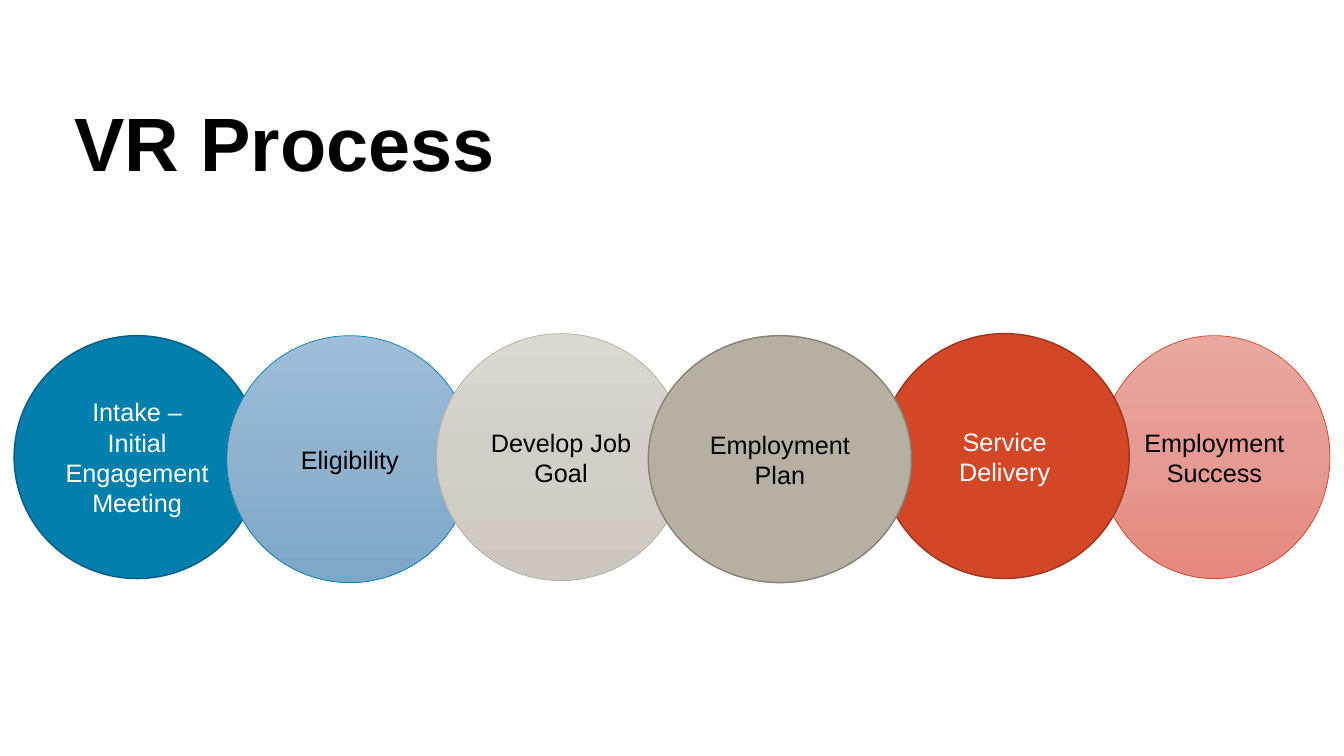
import copy

import pptx
import pptx.dml.color
import pptx.enum.shapes
import pptx.enum.text
import pptx.oxml.ns
import pptx.util

Inches = pptx.util.Inches
Pt = pptx.util.Pt
RGBColor = pptx.dml.color.RGBColor

BLACK = RGBColor(0x00, 0x00, 0x00)
WHITE = RGBColor(0xFF, 0xFF, 0xFF)
BLUE = RGBColor(0x03, 0x7F, 0xAE)
DARK_BLUE = RGBColor(0x02, 0x5E, 0x81)
STONE = RGBColor(0xB6, 0xB0, 0xA2)
DARK_STONE = RGBColor(0x87, 0x82, 0x78)
RED = RGBColor(0xD3, 0x47, 0x27)
DARK_RED = RGBColor(0x9C, 0x35, 0x1D)
BLUE_FADE = (RGBColor(0x9D, 0xBD, 0xD9), RGBColor(0x90, 0xB2, 0xCF), RGBColor(0x7C, 0xA7, 0xC9))
STONE_FADE = (RGBColor(0xDB, 0xD8, 0xD1), RGBColor(0xD2, 0xCF, 0xC7), RGBColor(0xCD, 0xC8, 0xBF))
RED_FADE = (RGBColor(0xEA, 0xA8, 0xA1), RGBColor(0xE5, 0x9A, 0x93), RGBColor(0xE6, 0x88, 0x7F))

TITLE = "VR Process"
TITLE_BOX = (0.64, 0.73, 11.5, 1.45)

STEPS = [
    ("Intake –\vInitial Engagement Meeting", (0.14, 3.33, 2.44, 2.41), (BLUE,), DARK_BLUE, WHITE),
    ("Eligibility", (2.25, 3.33, 2.44, 2.45), BLUE_FADE, BLUE, BLACK),
    ("Develop Job Goal", (4.33, 3.31, 2.47, 2.45), STONE_FADE, STONE, BLACK),
    ("Employment Success", (10.9, 3.33, 2.29, 2.41), RED_FADE, RED, BLACK),
    ("Service Delivery", (8.73, 3.31, 2.47, 2.43), (RED,), DARK_RED, WHITE),
    ("Employment Plan", (6.43, 3.33, 2.61, 2.45), (STONE,), DARK_STONE, BLACK),
]


def write_text(shape, text, color, size, bold, paragraph_format):
    frame = shape.text_frame
    frame.word_wrap = True
    frame.vertical_anchor = pptx.enum.text.MSO_ANCHOR.MIDDLE
    paragraph = frame.paragraphs[0]
    paragraph.text = text
    for name, value in paragraph_format.items():
        setattr(paragraph, name, value)
    for run in paragraph.runs:
        run.font.color.rgb = color
        for name, value in {"name": "Arial", "size": Pt(size), "bold": bold}.items():
            setattr(run.font, name, value)


def fill_shape(shape, colors):
    if len(colors) == 1:
        shape.fill.solid()
        shape.fill.fore_color.rgb = colors[0]
        return
    shape.fill.gradient()
    shape.fill.gradient_angle = 270
    stop_list = shape.element.spPr.find(".//" + pptx.oxml.ns.qn("a:gsLst"))
    stop_list.insert(1, copy.deepcopy(stop_list[0]))
    for index, (stop, color) in enumerate(zip(shape.fill.gradient_stops, colors)):
        stop.color.rgb = color
        stop.position = index / (len(colors) - 1)


def add_step(slide, text, box, colors, line_color, text_color):
    shape = slide.shapes.add_shape(
        pptx.enum.shapes.MSO_SHAPE.FLOWCHART_CONNECTOR, *map(Inches, box)
    )
    shape.shadow.inherit = False
    fill_shape(shape, colors)
    shape.line.color.rgb = line_color
    shape.line.width = Pt(1 if len(colors) == 1 else 0.5)
    write_text(shape, text, text_color, 18, False, {"alignment": pptx.enum.text.PP_ALIGN.CENTER})


def main():
    presentation = pptx.Presentation()
    presentation.slide_width = Inches(13.33)
    presentation.slide_height = Inches(7.5)
    slide = presentation.slides.add_slide(presentation.slide_layouts[6])
    title = slide.shapes.add_textbox(*map(Inches, TITLE_BOX))
    write_text(title, TITLE, BLACK, 54, True, {"line_spacing": 0.9})
    for step in STEPS:
        add_step(slide, *step)
    presentation.save("out.pptx")


if __name__ == "__main__":
    main()
